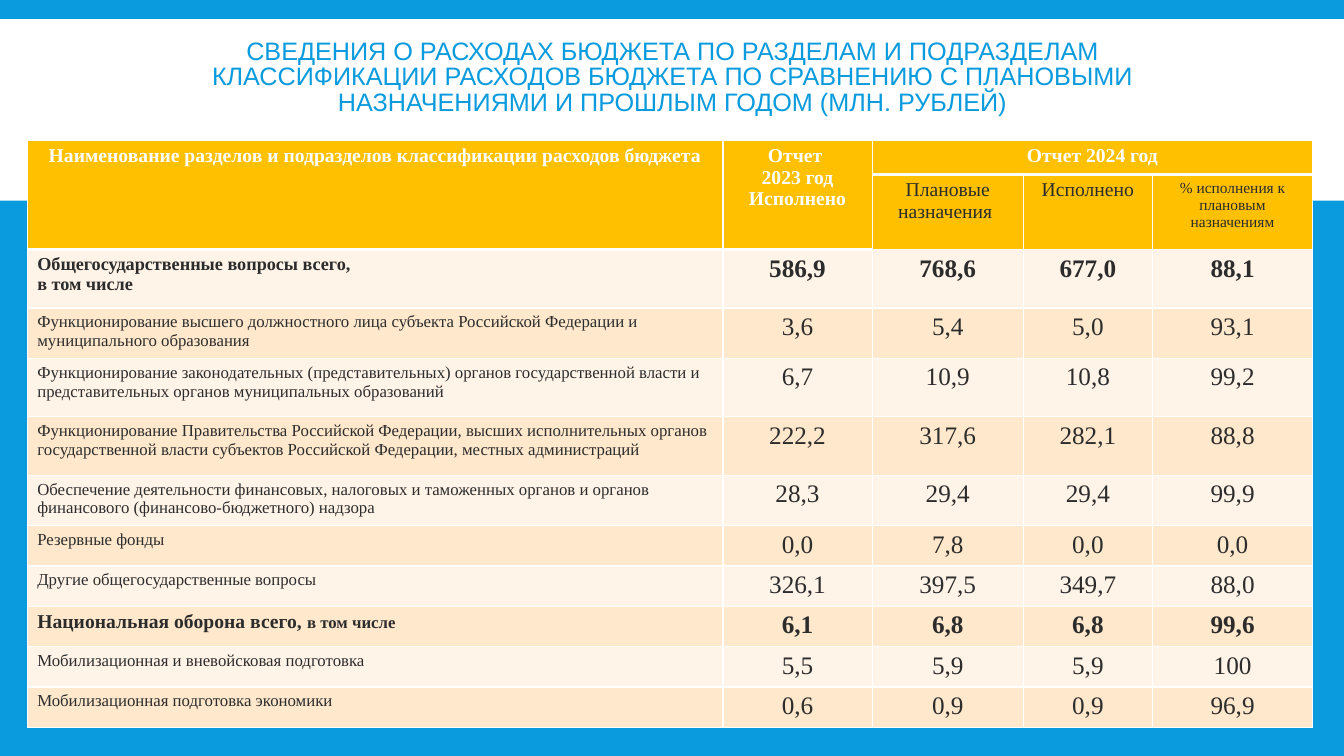
from lxml.etree import SubElement
from pptx import Presentation
from pptx.dml.color import RGBColor
from pptx.enum.shapes import MSO_SHAPE
from pptx.enum.text import MSO_ANCHOR, MSO_AUTO_SIZE, PP_ALIGN
from pptx.oxml.ns import qn
from pptx.util import Inches, Pt

BLUE = RGBColor(0x09, 0x9B, 0xDD)
WHITE = RGBColor(0xFF, 0xFF, 0xFF)
DARK = RGBColor(0x2C, 0x2C, 0x2C)
GOLD = RGBColor(0xFF, 0xC0, 0x00)
CREAM = RGBColor(0xFF, 0xF4, 0xE7)
PEACH = RGBColor(0xFF, 0xE8, 0xCC)
SERIF = "Times New Roman"

TITLE = ("СВЕДЕНИЯ О РАСХОДАХ БЮДЖЕТА ПО РАЗДЕЛАМ И ПОДРАЗДЕЛАМ "
         "КЛАССИФИКАЦИИ РАСХОДОВ БЮДЖЕТА ПО СРАВНЕНИЮ С ПЛАНОВЫМИ "
         "НАЗНАЧЕНИЯМИ И ПРОШЛЫМ ГОДОМ (МЛН. РУБЛЕЙ)")

COLUMN_WIDTHS = [6.9, 1.48, 1.5, 1.28, 1.59]
ROW_HEIGHTS = [0.34, 0.73, 0.58, 0.5, 0.58, 0.58, 0.5] + [0.4] * 5

# Row, column, text, size, bold, colour
HEADERS = [
    (0, 0, "Наименование разделов и подразделов классификации расходов бюджета",
     14, True, WHITE),
    (0, 1, "Отчет \n2023 год Исполнено", 14, True, WHITE),
    (0, 2, "Отчет 2024 год", 14, True, WHITE),
    (1, 2, "Плановые назначения ", 14, False, DARK),
    (1, 3, "Исполнено", 14, False, DARK),
    (1, 4, "% исполнения к плановым назначениям", 11, False, DARK),
]

# Name, name size, bold, values
EXPENSES = [
    ("Общегосударственные вопросы всего,\nв том числе", 13, True,
     ["586,9", "768,6", "677,0", "88,1"]),
    ("Функционирование высшего должностного лица субъекта Российской "
     "Федерации и муниципального образования", 12, False,
     ["3,6", "5,4", "5,0", "93,1"]),
    ("Функционирование законодательных (представительных) органов "
     "государственной власти и представительных органов муниципальных "
     "образований", 12, False, ["6,7", "10,9", "10,8", "99,2"]),
    ("Функционирование Правительства Российской Федерации, высших "
     "исполнительных органов государственной власти субъектов Российской "
     "Федерации, местных администраций", 12, False,
     ["222,2", "317,6", "282,1", "88,8"]),
    ("Обеспечение деятельности финансовых, налоговых и таможенных органов и "
     "органов финансового (финансово-бюджетного) надзора", 12, False,
     ["28,3", "29,4", "29,4", "99,9"]),
    ("Резервные фонды", 12, False, ["0,0", "7,8", "0,0", "0,0"]),
    ("Другие общегосударственные вопросы", 12, False,
     ["326,1", "397,5", "349,7", "88,0"]),
    ("Национальная оборона всего, ", 14, True, ["6,1", "6,8", "6,8", "99,6"]),
    ("Мобилизационная и вневойсковая подготовка", 12, False,
     ["5,5", "5,9", "5,9", "100"]),
    ("Мобилизационная подготовка экономики", 12, False,
     ["0,6", "0,9", "0,9", "96,9"]),
]
DEFENCE_NAME = "Национальная оборона всего, "
DEFENCE_SUFFIX = "в том числе"


def add_run(paragraph, text, size, font=SERIF, color=DARK, bold=False):
    run = paragraph.add_run()
    run.text = text
    run.font.size = Pt(size)
    run.font.name = font
    run.font.color.rgb = color
    run.font.bold = bold


def write_text(text_frame, text, size, align=PP_ALIGN.LEFT, line_spacing=None,
               **run_format):
    """Write one paragraph for each line of text."""
    text_frame.clear()
    for index, line in enumerate(text.split("\n")):
        paragraph = (text_frame.add_paragraph() if index
                     else text_frame.paragraphs[0])
        paragraph.alignment = align
        if line_spacing:
            paragraph.line_spacing = line_spacing
        add_run(paragraph, line, size, **run_format)


def style_cell(cell, fill, bottom_width):
    properties = cell._tc.get_or_add_tcPr()
    for side, width in (("L", 1), ("R", 1), ("T", 1), ("B", bottom_width)):
        line = SubElement(properties, qn(f"a:ln{side}"), w=str(Pt(width)))
        line_fill = SubElement(line, qn("a:solidFill"))
        SubElement(line_fill, qn("a:srgbClr"), val=str(WHITE))
    cell.fill.solid()
    cell.fill.fore_color.rgb = fill


def add_title(slide):
    title = slide.shapes.title
    title.left, title.top = Inches(1.32), Inches(0.31)
    title.width, title.height = Inches(10.7), Inches(0.93)
    text_frame = title.text_frame
    text_frame.word_wrap = True
    text_frame.auto_size = MSO_AUTO_SIZE.NONE
    text_frame.vertical_anchor = MSO_ANCHOR.MIDDLE
    write_text(text_frame, TITLE, 18, align=PP_ALIGN.CENTER,
               line_spacing=0.85, font="Arial", color=BLUE)


def add_title_band(slide):
    band = slide.shapes.add_shape(MSO_SHAPE.RECTANGLE, Inches(0), Inches(0.19),
                                  Inches(13.33), Inches(1.8))
    band.shadow.inherit = False
    band.fill.solid()
    band.fill.fore_color.rgb = WHITE
    band.line.fill.background()
    # The band lies behind the title
    slide.shapes.title.element.addprevious(band.element)


def add_expense_table(slide):
    table = slide.shapes.add_table(
        len(ROW_HEIGHTS), len(COLUMN_WIDTHS), Inches(0.27), Inches(1.39),
        Inches(sum(COLUMN_WIDTHS)), Inches(sum(ROW_HEIGHTS))).table
    for column, width in zip(table.columns, COLUMN_WIDTHS):
        column.width = Inches(width)
    for row, height in zip(table.rows, ROW_HEIGHTS):
        row.height = Inches(height)

    # Fills and borders
    for row_index, row in enumerate(table.rows):
        stripe = PEACH if row_index % 2 else CREAM
        for cell in row.cells:
            style_cell(cell, GOLD if row_index < 2 else stripe,
                       bottom_width=1 if row_index else 3)

    # Header
    for column_index in (0, 1):
        table.cell(0, column_index).merge(table.cell(1, column_index))
    table.cell(0, 2).merge(table.cell(0, 4))
    for row_index, column_index, text, size, bold, color in HEADERS:
        write_text(table.cell(row_index, column_index).text_frame, text, size,
                   align=PP_ALIGN.CENTER, bold=bold, color=color)

    # Expense rows
    for row_index, (name, size, bold, values) in enumerate(EXPENSES, start=2):
        name_frame = table.cell(row_index, 0).text_frame
        write_text(name_frame, name, size, bold=bold)
        if name == DEFENCE_NAME:
            add_run(name_frame.paragraphs[0], DEFENCE_SUFFIX, 12, bold=True)
        for column_index, value in enumerate(values, start=1):
            write_text(table.cell(row_index, column_index).text_frame, value,
                       18, align=PP_ALIGN.CENTER, bold=bold)


def main():
    presentation = Presentation()
    presentation.slide_width = Inches(13.33)
    presentation.slide_height = Inches(7.5)
    slide = presentation.slides.add_slide(presentation.slide_layouts[5])
    slide.background.fill.solid()
    slide.background.fill.fore_color.rgb = BLUE
    add_title_band(slide)
    add_title(slide)
    add_expense_table(slide)
    presentation.save("out.pptx")


if __name__ == "__main__":
    main()
